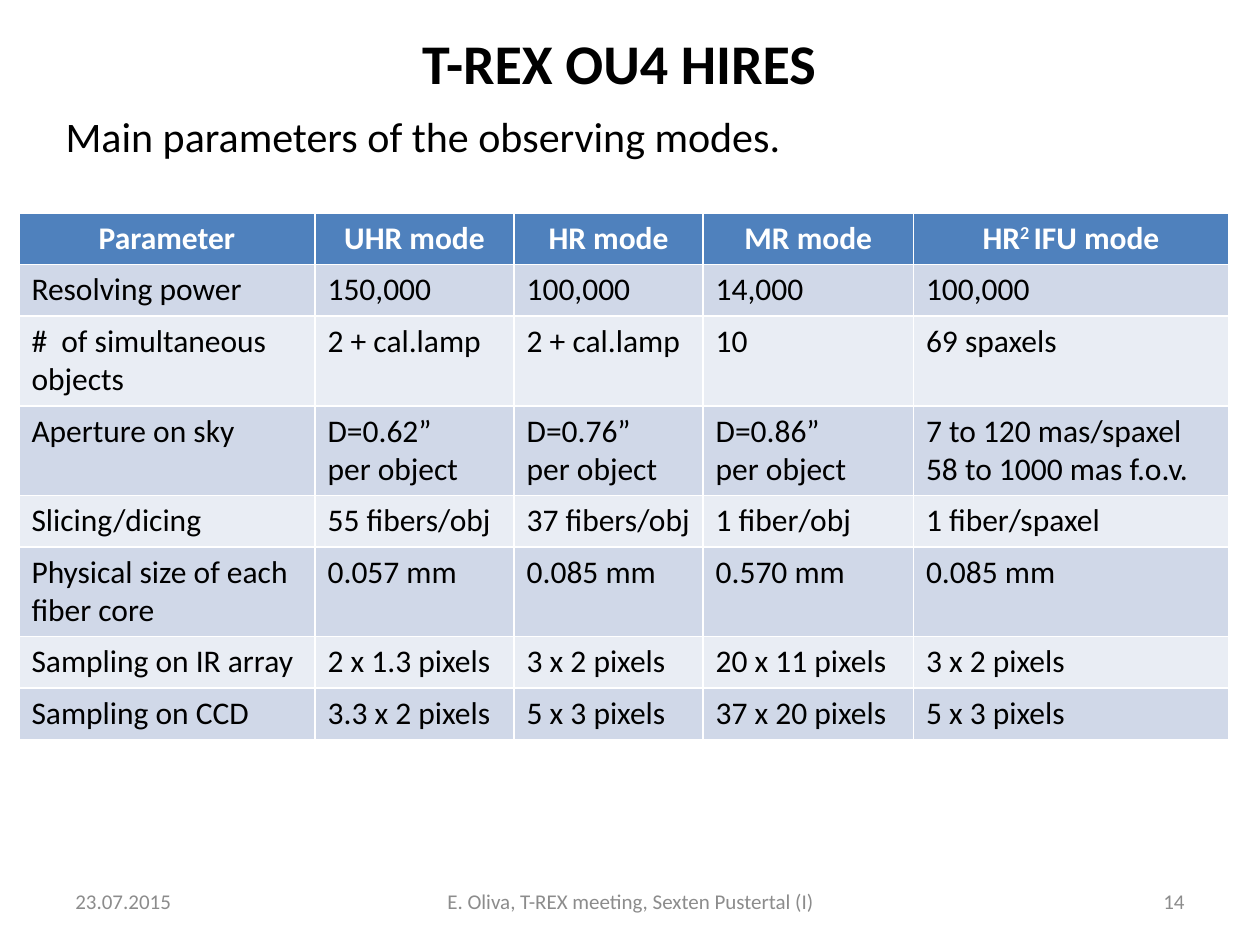
import pptx
import pptx.dml.color
import pptx.enum.text
import pptx.util

ALIGN = pptx.enum.text.PP_ALIGN
ANCHOR = pptx.enum.text.MSO_ANCHOR
INCH = pptx.util.Inches
COLORS = {
    "text": "000000",
    "footer": "8C8C8C",
    "header_text": "FFFFFF",
    "header": "4F81BD",
    "odd_row": "D0D8E8",
    "even_row": "E9EDF4",
}
COLUMN_WIDTHS = [2.35, 1.58, 1.5, 1.67, 2.5]
ROW_HEIGHT = 0.41
PARAMETERS = [
    ["Parameter", "UHR mode", "HR mode", "MR mode", "HR^2 ^IFU mode"],
    ["Resolving power", "150,000", "100,000", "14,000", "100,000"],
    ["#  of simultaneous objects", "2 + cal.lamp", "2 + cal.lamp", "10", "69 spaxels"],
    ["Aperture on sky", "D=0.62”\nper object", "D=0.76”\nper object",
     "D=0.86”\nper object", "7 to 120 mas/spaxel\n58 to 1000 mas f.o.v."],
    ["Slicing/dicing", "55 fibers/obj", "37 fibers/obj", "1 fiber/obj", "1 fiber/spaxel"],
    ["Physical size of each fiber core", "0.057 mm", "0.085 mm", "0.570 mm", "0.085 mm"],
    ["Sampling on IR array", "2 x 1.3 pixels", "3 x 2 pixels", "20 x 11 pixels", "3 x 2 pixels"],
    ["Sampling on CCD", "3.3 x 2 pixels", "5 x 3 pixels", "37 x 20 pixels", "5 x 3 pixels"],
]


def rgb(name):
    return pptx.dml.color.RGBColor.from_string(COLORS[name])


def write(frame, text, size=18, color="text", bold=False, align=ALIGN.LEFT):
    for index, line in enumerate(text.split("\n")):
        para = frame.add_paragraph() if index else frame.paragraphs[0]
        para.alignment = align
        para.space_before = pptx.util.Pt(0)
        for part_index, part in enumerate(line.split("^")):
            span = para.add_run()
            span.text = part
            span.font.name = "Calibri"
            span.font.size = pptx.util.Pt(size)
            span.font.bold = bold
            span.font.color.rgb = rgb(color)
            if part_index % 2:
                span.font._element.set("baseline", "30000")


def fill_placeholder(box, place, text, anchor, **style):
    box.left, box.top, box.width, box.height = map(INCH, place)
    box.text_frame.vertical_anchor = anchor
    box.text_frame.auto_size = pptx.enum.text.MSO_AUTO_SIZE.NONE
    write(box.text_frame, text, **style)


def add_footer(page, left, width, text, align):
    box = page.shapes.add_textbox(*map(INCH, (left, 6.95, width, 0.4)))
    box.text_frame.word_wrap = True
    box.text_frame.vertical_anchor = ANCHOR.MIDDLE
    write(box.text_frame, text, size=12, color="footer", align=align)


def add_parameter_table(page):
    frame = page.shapes.add_table(
        len(PARAMETERS), len(COLUMN_WIDTHS), INCH(0.15), INCH(1.69),
        INCH(sum(COLUMN_WIDTHS)), INCH(ROW_HEIGHT * len(PARAMETERS)))
    table = frame.table
    for column, width in zip(table.columns, COLUMN_WIDTHS):
        column.width = INCH(width)
    for row_index, values in enumerate(PARAMETERS):
        table.rows[row_index].height = INCH(ROW_HEIGHT)
        if row_index == 0:
            fill = "header"
            style = {"color": "header_text", "bold": True, "align": ALIGN.CENTER}
        else:
            fill = "odd_row" if row_index % 2 else "even_row"
            style = {}
        for column_index, text in enumerate(values):
            cell = table.cell(row_index, column_index)
            cell.fill.solid()
            cell.fill.fore_color.rgb = rgb(fill)
            write(cell.text_frame, text, **style)


def main():
    deck = pptx.Presentation()
    deck.slide_width, deck.slide_height = INCH(10), INCH(7.5)
    page = deck.slides.add_slide(deck.slide_layouts[0])
    fill_placeholder(page.shapes.title, (0.75, 0.08, 8.33, 0.83), "T-REX OU4 HIRES",
                     ANCHOR.MIDDLE, size=32, bold=True, align=ALIGN.CENTER)
    fill_placeholder(page.placeholders[1], (0.42, 0.83, 9.33, 0.5),
                     "Main parameters of the observing modes.",
                     ANCHOR.TOP, size=24, align=ALIGN.JUSTIFY)
    add_parameter_table(page)
    add_footer(page, 0.5, 2.33, "23.07.2015", ALIGN.LEFT)
    add_footer(page, 3.42, 3.17, "E. Oliva, T-REX meeting, Sexten Pustertal (I)", ALIGN.CENTER)
    add_footer(page, 7.17, 2.33, "14", ALIGN.RIGHT)
    deck.save("out.pptx")


if __name__ == "__main__":
    main()
